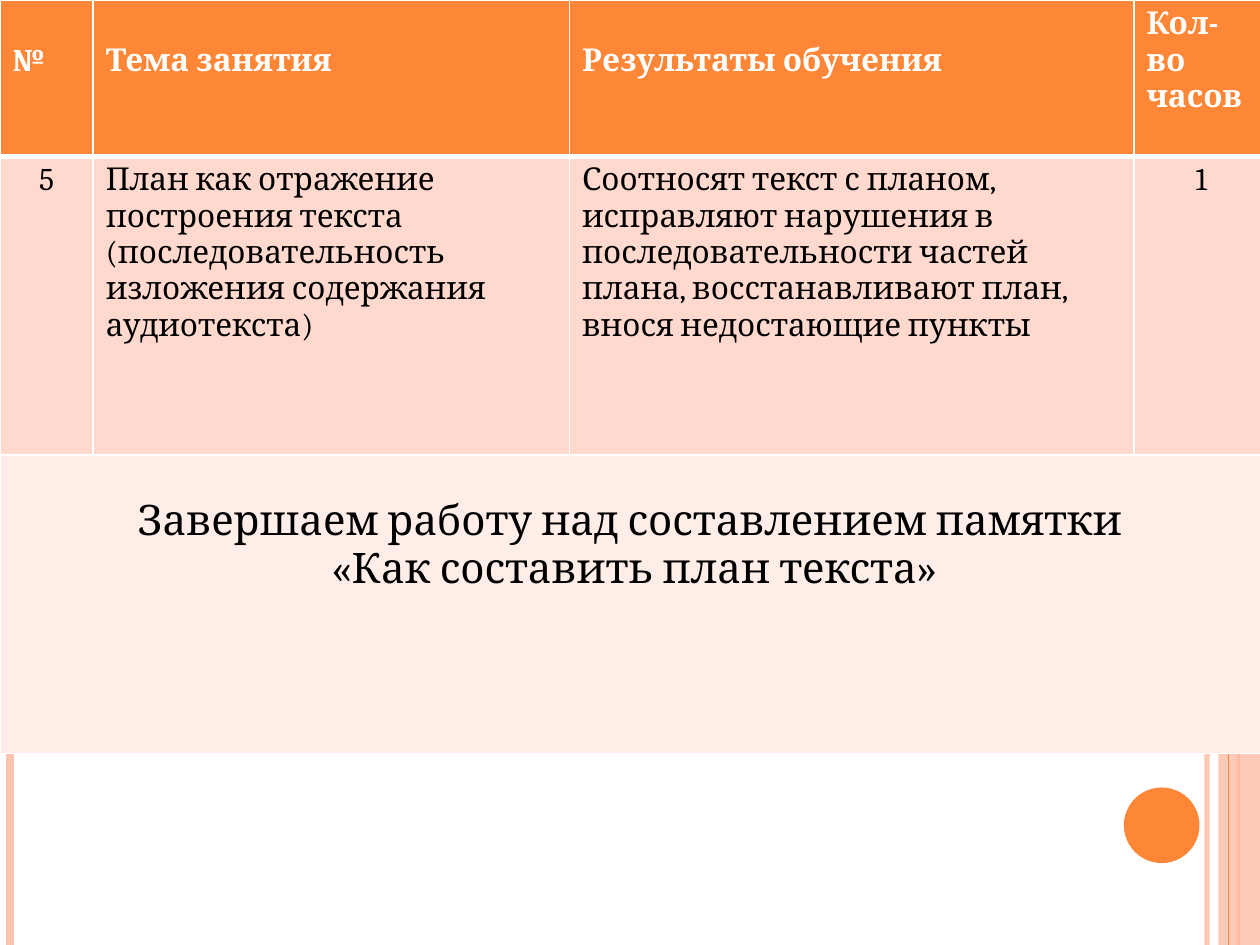
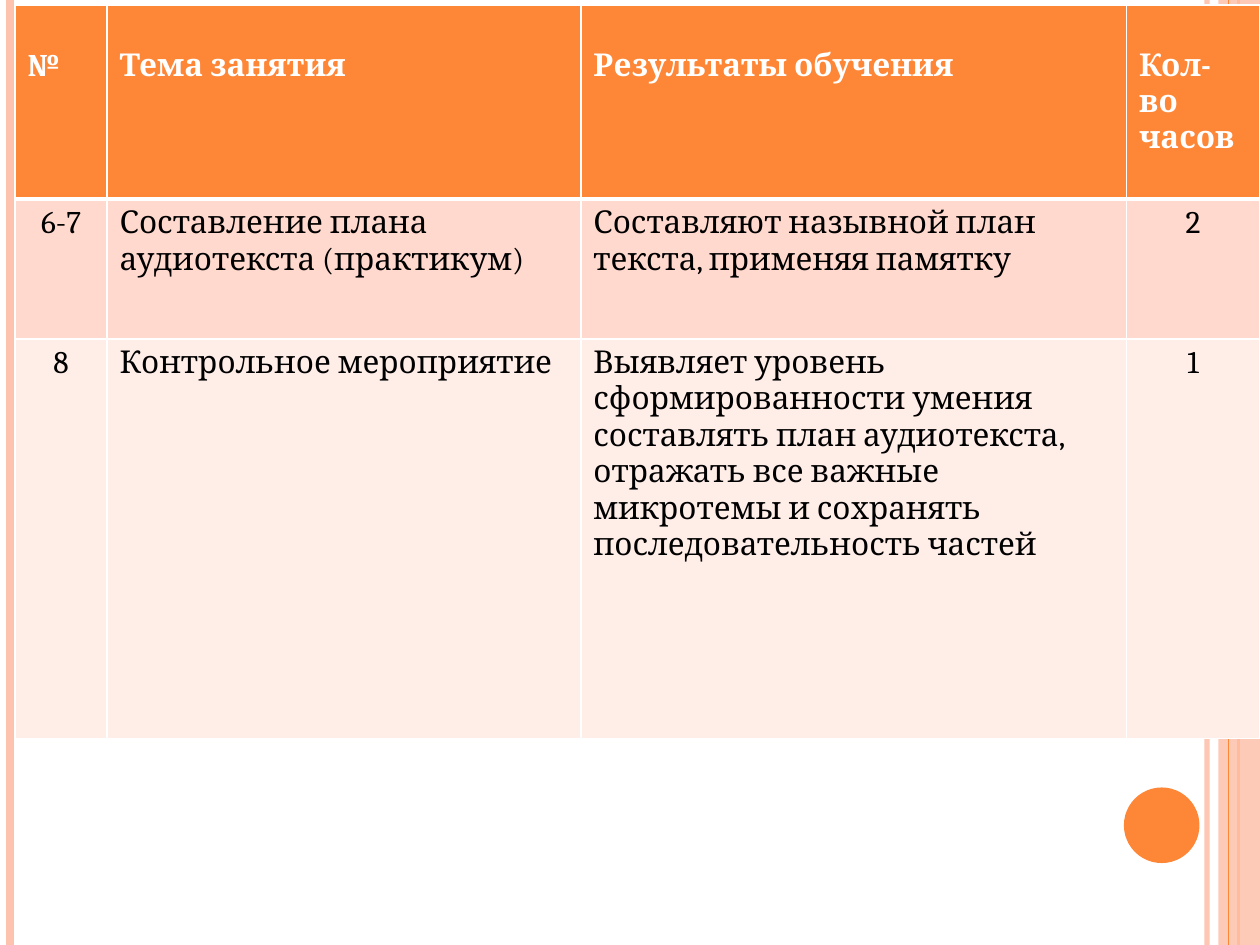
import pptx
import pptx.util
import pptx.dml.color
import pptx.enum.shapes
import pptx.enum.text
import pptx.oxml.ns
import lxml.etree

Inches = pptx.util.Inches
Pt = pptx.util.Pt
RGBColor = pptx.dml.color.RGBColor
SHAPE = pptx.enum.shapes.MSO_SHAPE
ALIGN = pptx.enum.text.PP_ALIGN
qn = pptx.oxml.ns.qn

WHITE = RGBColor(0xFF, 0xFF, 0xFF)
BLACK = RGBColor(0, 0, 0)
ORANGE = RGBColor(0xFE, 0x86, 0x37)
PEACH = RGBColor(0xFE, 0xC3, 0xAE)
ROW_FILLS = [ORANGE, RGBColor(0xFF, 0xD9, 0xCE), RGBColor(0xFF, 0xED, 0xE8)]
FONT = "Cambria"
CELL_MARGIN = 0.05
LINE_HEIGHT = 0.29
HEADER = ["№", "Тема занятия", "Результаты обучения", "Кол-во\nчасов"]
CENTERED_COLUMNS = (0, 3)


class LessonDeck:
    """Holds the lesson plan style and the slide being built."""

    def __init__(self):
        self.presentation = pptx.Presentation()
        self.presentation.slide_width = Inches(10)
        self.presentation.slide_height = Inches(7.5)
        self.slide = None

    def add_slide(self):
        self.slide = self.presentation.slides.add_slide(self.presentation.slide_layouts[6])
        self.slide.background.fill.solid()
        self.slide.background.fill.fore_color.rgb = WHITE
        self.add_stripe(9.58, PEACH, 3, 93)
        self.add_stripe(0.08, PEACH, 4.5)
        self.add_stripe(9.83, ORANGE, 1.5)
        self.add_shape(SHAPE.RECTANGLE, 9.67, 0, 0.33, 7.5, PEACH, 87)
        self.add_stripe(9.75, ORANGE, 0.75)
        self.add_shape(SHAPE.OVAL, 8.92, 6.25, 0.6, 0.6, ORANGE)

    def set_opacity(self, element, percent):
        color = next(element.iter(qn("a:srgbClr")))
        lxml.etree.SubElement(color, qn("a:alpha"), val=str(percent * 1000))

    def add_stripe(self, x, color, width, opacity=100):
        stripe = self.slide.shapes.add_connector(
            pptx.enum.shapes.MSO_CONNECTOR.STRAIGHT, Inches(x), 0, Inches(x), Inches(7.5))
        stripe.line.color.rgb = color
        stripe.line.width = Pt(width)
        properties = stripe._element.spPr
        if opacity < 100:
            self.set_opacity(properties, opacity)
        lxml.etree.SubElement(properties, qn("a:effectLst"))

    def add_shape(self, kind, left, top, width, height, color, opacity=100):
        shape = self.slide.shapes.add_shape(
            kind, Inches(left), Inches(top), Inches(width), Inches(height))
        shape.shadow.inherit = False
        shape.fill.solid()
        shape.fill.fore_color.rgb = color
        shape.line.fill.background()
        if opacity < 100:
            self.set_opacity(shape._element.spPr, opacity)

    def add_borders(self, cell, top, bottom):
        properties = cell._tc.get_or_add_tcPr()
        for side, width in (("L", 1), ("R", 1), ("T", top), ("B", bottom)):
            line = lxml.etree.SubElement(properties, qn("a:ln" + side), w=str(Pt(width)))
            fill = lxml.etree.SubElement(line, qn("a:solidFill"))
            lxml.etree.SubElement(fill, qn("a:srgbClr"), val=str(WHITE))

    def fill_cell(self, cell, text, row, centered, size=18, lowered=False):
        self.add_borders(cell, 3 if row == 1 else 1, 3 if row == 0 else 1)
        cell.fill.solid()
        cell.fill.fore_color.rgb = ROW_FILLS[row]
        cell.margin_top = Inches(CELL_MARGIN + LINE_HEIGHT * lowered)
        cell.text_frame.text = text
        for paragraph in cell.text_frame.paragraphs:
            paragraph.alignment = ALIGN.CENTER if centered else ALIGN.LEFT
            for run in paragraph.runs:
                run.font.name = FONT
                run.font.size = Pt(size)
                run.font.bold = row == 0
                run.font.color.rgb = WHITE if row == 0 else BLACK

    def add_table(self, left, top, widths, heights, lessons, hours_lowered):
        table = self.slide.shapes.add_table(
            len(heights), len(widths), Inches(left), Inches(top),
            Inches(sum(widths)), Inches(sum(heights))).table
        table.horz_banding = False
        for column, width in zip(table.columns, widths):
            column.width = Inches(width)
        for row, height in zip(table.rows, heights):
            row.height = Inches(height)
        for row, texts in enumerate([HEADER] + lessons):
            for column, text in enumerate(texts):
                self.fill_cell(
                    table.cell(row, column), text, row,
                    centered=row > 0 and column in CENTERED_COLUMNS,
                    lowered=row == 0 and (column < 3 or hours_lowered))
        return table

    def add_summary(self, table, row, text):
        last_column = len(table.columns) - 1
        table.cell(row, 0).merge(table.cell(row, last_column))
        self.fill_cell(table.cell(row, 0), text, row, centered=True, size=24, lowered=True)


def main():
    deck = LessonDeck()

    deck.add_slide()
    plan_table = deck.add_table(0, 0, [0.74, 3.78, 4.48, 1.07], [1.24, 2.37, 2.37], [
        ["5",
         "План как отражение построения текста (последовательность изложения "
         "содержания аудиотекста)",
         "Соотносят текст с планом, исправляют нарушения в последовательности частей "
         "плана, восстанавливают план, внося недостающие пункты",
         "1"],
    ], hours_lowered=False)
    deck.add_summary(
        plan_table, 2,
        "Завершаем работу над составлением памятки \n«Как составить план текста»")

    deck.add_slide()
    deck.add_table(0.12, 0.04, [0.73, 3.76, 4.33, 1.06], [1.54, 1.11, 3.17], [
        ["6-7",
         "Составление плана аудиотекста (практикум)",
         "Составляют назывной план текста, применяя памятку",
         "2"],
        ["8",
         "Контрольное мероприятие",
         "Выявляет уровень сформированности умения составлять план аудиотекста, "
         "отражать все важные микротемы и сохранять последовательность частей",
         "1"],
    ], hours_lowered=True)

    deck.presentation.save("out.pptx")


if __name__ == "__main__":
    main()
